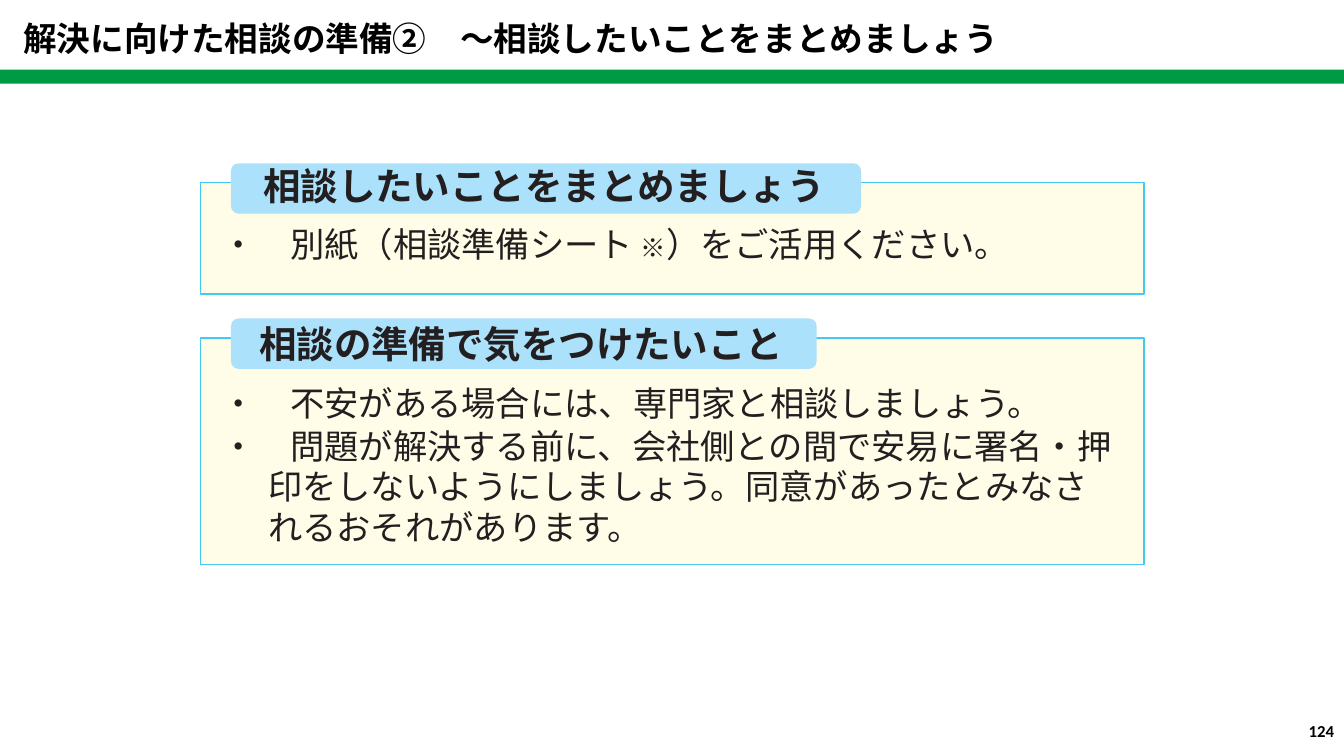
from lxml import etree
from pptx import Presentation
from pptx.dml.color import RGBColor
from pptx.enum.shapes import MSO_SHAPE
from pptx.enum.text import MSO_ANCHOR, MSO_AUTO_SIZE, PP_ALIGN
from pptx.oxml.ns import qn
from pptx.util import Inches, Pt

RECTANGLE, ROUNDED = MSO_SHAPE.RECTANGLE, MSO_SHAPE.ROUNDED_RECTANGLE
LEFT, RIGHT = PP_ALIGN.LEFT, PP_ALIGN.RIGHT
TOP, NO_AUTOFIT = MSO_ANCHOR.TOP, MSO_AUTO_SIZE.NONE

JAPANESE_FONT = "Noto Sans CJK JP"
BLACK, INK, GREEN = "000000", "231F20", "009944"
CREAM, SKY, LABEL_BLUE = "FFFDE8", "44C8F4", "ABE1FA"
HEADING_SIZE, BODY_SIZE, MARK_SIZE = 26.8, 24.5, 18.1


def color(hex_value):
    return RGBColor.from_string(hex_value)


def place(shape, left, top, width, height):
    shape.left, shape.top = Inches(left), Inches(top)
    shape.width, shape.height = Inches(width), Inches(height)


def prepare_frame(shape, margins=(0.1, 0.05, 0.1, 0.05)):
    frame = shape.text_frame
    frame.word_wrap = True
    frame.auto_size = NO_AUTOFIT
    frame.vertical_anchor = TOP
    (frame.margin_left, frame.margin_top,
     frame.margin_right, frame.margin_bottom) = map(Inches, margins)
    return frame


def add_run(paragraph, text, size, font=JAPANESE_FONT, hex_value=INK, bold=False):
    run = paragraph.add_run()
    run.text = text
    run.font.size, run.font.bold, run.font.name = Pt(size), bold, font
    run.font.color.rgb = color(hex_value)
    east_asian = etree.SubElement(run._r.get_or_add_rPr(), qn("a:ea"))
    east_asian.set("typeface", font)


def write(paragraph, *pieces, align=LEFT, before=0, line=None, margin=0, indent=0, **style):
    """Write (text, size) pieces into one unbulleted paragraph."""
    paragraph.alignment = align
    paragraph.space_before = Pt(before)
    paragraph.line_spacing = Pt(line) if line else 1.0
    properties = paragraph._p.get_or_add_pPr()
    properties.set("marL", str(Inches(margin)))
    properties.set("indent", str(Inches(indent)))
    etree.SubElement(properties, qn("a:buNone"))
    for text, size in pieces:
        add_run(paragraph, text, size, **style)


def add_block(slide, preset, box, fill, outline=None):
    shape = slide.shapes.add_shape(preset, *map(Inches, box))
    shape.shadow.inherit = False
    shape.fill.solid()
    shape.fill.fore_color.rgb = color(fill)
    if outline:
        shape.line.color.rgb = color(outline)
        shape.line.width = Pt(1.25)
    else:
        shape.line.fill.background()
    return shape


def add_header(slide, text):
    # Title above a full-width green bar
    title = slide.shapes.title
    place(title, 0.13, 0.13, 10.55, 0.5)
    write(prepare_frame(title).paragraphs[0], (text, 24), hex_value=BLACK, bold=True)
    add_block(slide, RECTANGLE, (0, 0.69, 13.33, 0.14), GREEN)


def add_panel(slide, body, box, label_width, text_box, paragraphs):
    # Cream panel with a label across its top edge
    left, top, width, height = box
    add_block(slide, RECTANGLE, box, CREAM, SKY)
    label = add_block(slide, ROUNDED, (left + 0.3, top - 0.19, label_width, 0.5), LABEL_BLUE)
    label.adjustments[0] = 0.15

    # Heading and list, in front of the panel; the right inset keeps lines inside it
    text_left, text_top, text_width, text_height = text_box
    place(body, left + text_left, top + text_top, text_width, text_height)
    body.element.getparent().append(body.element)
    frame = prepare_frame(body, (0, 0.18, 0.43, 0))
    for index, (pieces, layout) in enumerate(paragraphs):
        paragraph = frame.add_paragraph() if index else frame.paragraphs[0]
        write(paragraph, *pieces, **layout)


def add_page_number(slide, number):
    box = slide.shapes.add_textbox(*map(Inches, (10.22, 7.1, 3.11, 0.4)))
    write(prepare_frame(box).paragraphs[0], (number, 12),
          align=RIGHT, font="Calibri", hex_value=BLACK, bold=True)


def main():
    presentation = Presentation()
    presentation.slide_width, presentation.slide_height = Inches(13.33), Inches(7.5)
    slide = presentation.slides.add_slide(presentation.slide_layouts.get_by_name("Two Content"))
    summary_body, caution_body = slide.placeholders[1], slide.placeholders[2]

    add_header(slide, "解決に向けた相談の準備②　～相談したいことをまとめましょう")

    add_panel(slide, summary_body, (1.99, 1.81, 9.36, 1.11), 6.25, (0.2, -0.37, 9.47, 1.2), [
        ([("相談したいことをまとめましょう", HEADING_SIZE)],
         dict(margin=0.42, before=12.7, bold=True)),
        ([("・　別紙（相談準備シート ", BODY_SIZE), ("※", MARK_SIZE),
          ("）をご活用ください。", BODY_SIZE)],
         dict(margin=0.01, before=11)),
    ])
    add_panel(slide, caution_body, (1.99, 3.35, 9.36, 2.25), 5.81, (0.2, -0.35, 9.3, 2.44), [
        ([("相談の準備で気をつけたいこと", HEADING_SIZE)],
         dict(margin=0.38, before=0.1, bold=True)),
        ([("・　不安がある場合には、専門家と相談しましょう。", BODY_SIZE)],
         dict(margin=0.01, before=12.1, line=29.3)),
        ([("・　問題が解決する前に、会社側との間で安易に署名・押印をしないようにしましょう。"
           "同意があったとみなされるおそれがあります。", BODY_SIZE)],
         dict(margin=0.47, indent=-0.46, before=1.1, line=29.2)),
    ])

    add_page_number(slide, "124")
    presentation.save("out.pptx")


if __name__ == "__main__":
    main()
